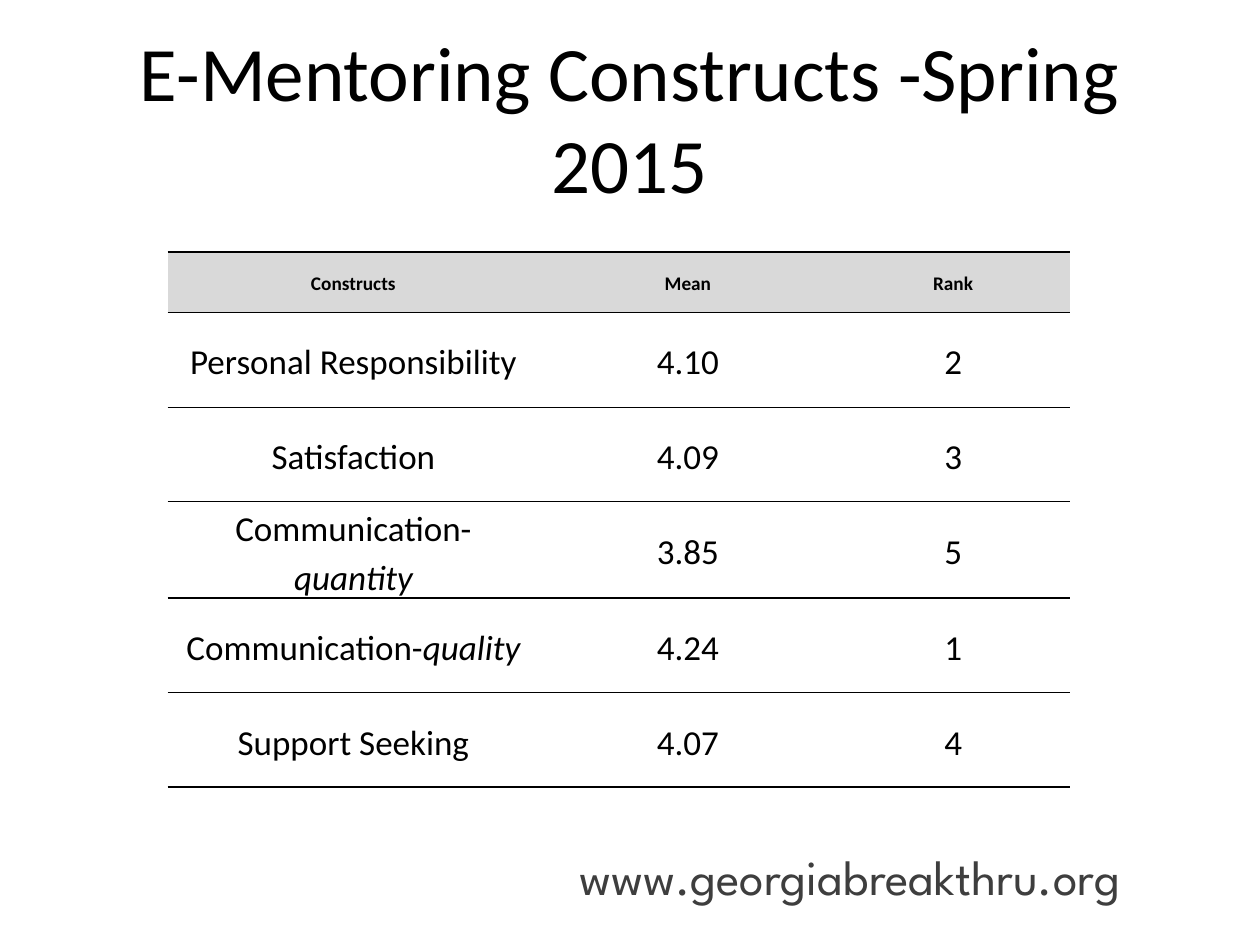
from dataclasses import dataclass

from lxml import etree
from pptx import Presentation
from pptx import util as u
from pptx.dml.color import RGBColor
from pptx.enum import text
from pptx.oxml import ns


@dataclass(frozen=True)
class Theme:
    font: str = "Calibri"
    link_font: str = "League Spartan"
    ink: str = "000000"
    link_ink: str = "3E3E3E"
    header_fill: str = "D9D9D9"
    title_size: int = 44
    header_size: int = 11
    body_size: int = 20
    link_size: int = 28
    rule: float = 1
    thin_rule: float = 0.5


THEME = Theme()
NO_STYLE = "{2D5ABB26-0587-4C30-8999-92F81FD0307C}"
COLUMNS = (2.95, 2.36, 1.85)
HEADER_HEIGHT, ROW_HEIGHT = 0.48, 0.75
HEADINGS = ("Constructs", "Mean", "Rank")
CONSTRUCTS = (
    ("Personal Responsibility", "", "4.10", "2"),
    ("Satisfaction", "", "4.09", "3"),
    ("Communication-", "quantity", "3.85", "5"),
    ("Communication-", "quality", "4.24", "1"),
    ("Support Seeking", "", "4.07", "4"),
)
THIN_ROWS = (1, 2)


def add_span(para, words, size=THEME.body_size, font=THEME.font,
             color=THEME.ink, bold=False, italic=False):
    span = para.add_run()
    span.text = words
    span.font.size = u.Pt(size)
    span.font.name = font
    span.font.color.rgb = RGBColor.from_string(color)
    span.font.bold = bold
    span.font.italic = italic


def add_text(page, words, left, top, width, height,
             align=text.PP_ALIGN.LEFT, anchor=text.MSO_ANCHOR.TOP, **style):
    box = page.shapes.add_textbox(*map(u.Inches, (left, top, width, height)))
    frame = box.text_frame
    frame.word_wrap = True
    frame.vertical_anchor = anchor
    para = frame.paragraphs[0]
    para.alignment = align
    add_span(para, words, **style)


def add_border(cell, side, width):
    line = etree.SubElement(cell._tc.get_or_add_tcPr(), ns.qn(f"a:{side}"),
                            w=str(u.Pt(width)))
    fill = etree.SubElement(line, ns.qn("a:solidFill"))
    etree.SubElement(fill, ns.qn("a:srgbClr"), val=THEME.ink)


def fill_cell(cell, words, emphasis="", top=None, bottom=THEME.rule,
              fill=None, **style):
    cell.margin_left = cell.margin_right = u.Inches(0.07)
    cell.margin_top = cell.margin_bottom = 0
    cell.vertical_anchor = text.MSO_ANCHOR.MIDDLE
    para = cell.text_frame.paragraphs[0]
    para.alignment = text.PP_ALIGN.CENTER
    para.line_spacing = 1.15
    add_span(para, words, **style)
    if emphasis:
        add_span(para, emphasis, italic=True, **style)
    if top:
        add_border(cell, "lnT", top)
    add_border(cell, "lnB", bottom)
    if fill:
        cell.fill.solid()
        cell.fill.fore_color.rgb = RGBColor.from_string(fill)
    else:
        cell.fill.background()


def add_construct_table(page, left, top):
    heights = [HEADER_HEIGHT] + [ROW_HEIGHT] * len(CONSTRUCTS)
    frame = page.shapes.add_table(
        len(heights), len(COLUMNS), u.Inches(left), u.Inches(top),
        u.Inches(sum(COLUMNS)), u.Inches(sum(heights)))
    table = frame.table
    table.first_row = table.horz_banding = False
    table._tbl.tblPr.find(ns.qn("a:tableStyleId")).text = NO_STYLE
    for column, width in zip(table.columns, COLUMNS):
        column.width = u.Inches(width)
    for row, height in zip(table.rows, heights):
        row.height = u.Inches(height)

    for index, heading in enumerate(HEADINGS):
        fill_cell(table.cell(0, index), heading, top=THEME.rule,
                  fill=THEME.header_fill, size=THEME.header_size, bold=True)
    above = THEME.rule
    for index, (name, emphasis, mean, rank) in enumerate(CONSTRUCTS, 1):
        below = THEME.thin_rule if index in THIN_ROWS else THEME.rule
        entries = ((name, emphasis), (mean,), (rank,))
        for column, entry in enumerate(entries):
            fill_cell(table.cell(index, column), *entry,
                      top=above, bottom=below)
        above = below


def main():
    deck = Presentation()
    deck.slide_width, deck.slide_height = u.Inches(10), u.Inches(7.5)
    page = deck.slides.add_slide(deck.slide_layouts[6])
    add_text(page, "E-Mentoring Constructs -Spring 2015", 0.5, 0.3, 9, 1.25,
             align=text.PP_ALIGN.CENTER, anchor=text.MSO_ANCHOR.MIDDLE,
             size=THEME.title_size)
    add_construct_table(page, 1.33, 2)
    add_text(page, "www.georgiabreakthru.org", 4.5, 6.67, 5.33, 0.4,
             size=THEME.link_size, font=THEME.link_font, color=THEME.link_ink)
    deck.save("out.pptx")


if __name__ == "__main__":
    main()
